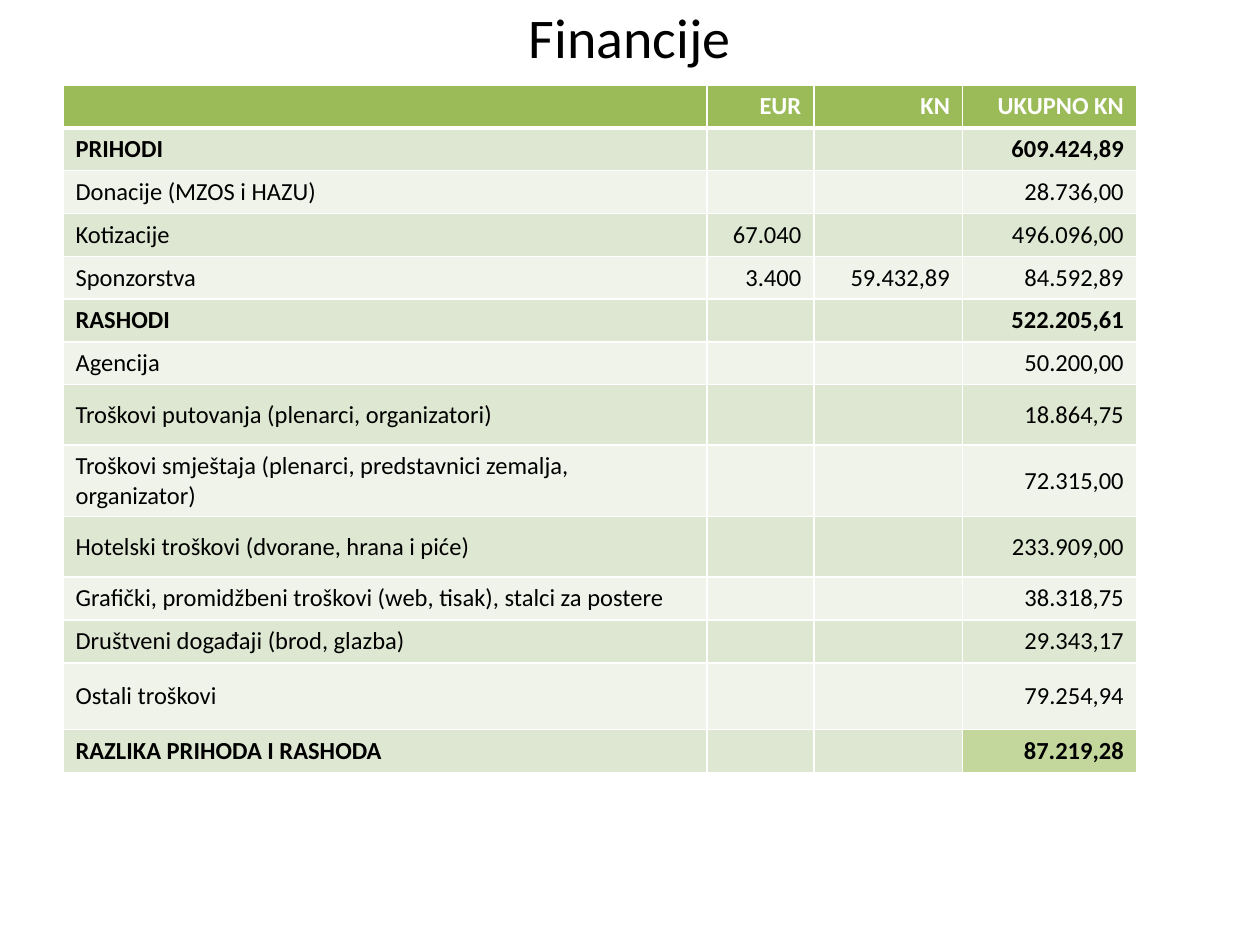
import pptx
import pptx.util
import pptx.dml.color
import pptx.enum.text
import pptx.oxml
import pptx.oxml.ns


def color(value):
    return pptx.dml.color.RGBColor.from_string(value)


def add_border(cell, side, width):
    ns = pptx.oxml.ns.nsdecls("a")
    line = pptx.oxml.parse_xml(
        f'<a:ln{side} {ns} w="{pptx.util.Pt(width)}"><a:solidFill>'
        f'<a:srgbClr val="FFFFFF"/></a:solidFill></a:ln{side}>')
    cell._tc.get_or_add_tcPr().append(line)


prs = pptx.Presentation()
prs.slide_width = pptx.util.Inches(10)
prs.slide_height = pptx.util.Inches(7.5)
W, H = prs.slide_width, prs.slide_height
ALIGN = pptx.enum.text.PP_ALIGN
MIDDLE = pptx.enum.text.MSO_ANCHOR.MIDDLE
s = prs.slides.add_slide(prs.slide_layouts[6])

sp = s.shapes.add_textbox(int(W * 0.05), pptx.util.Inches(-0.06),
                          int(W * 0.9), pptx.util.Inches(0.7))
tf = sp.text_frame
tf.word_wrap = True
tf.vertical_anchor = MIDDLE
p = tf.paragraphs[0]
p.alignment = ALIGN.CENTER
r = p.add_run()
r.text = "Financije"
r.font.size = pptx.util.Pt(32)
r.font.name = "Calibri"
r.font.color.rgb = color("000000")

rows = [
    ("", "EUR", "KN", "UKUPNO KN"),
    ("PRIHODI", "", "", "609.424,89"),
    ("Donacije (MZOS i HAZU)", "", "", "28.736,00"),
    ("Kotizacije", "67.040", "", "496.096,00"),
    ("Sponzorstva", "3.400", "59.432,89", "84.592,89"),
    ("RASHODI", "", "", "522.205,61"),
    ("Agencija", "", "", "50.200,00"),
    ("Troškovi putovanja (plenarci, organizatori)", "", "", "18.864,75"),
    ("Troškovi smještaja (plenarci, predstavnici zemalja, organizator)", "", "", "72.315,00"),
    ("Hotelski troškovi (dvorane, hrana i piće)", "", "", "233.909,00"),
    ("Grafički, promidžbeni troškovi (web, tisak), stalci za postere", "", "", "38.318,75"),
    ("Društveni događaji (brod, glazba)", "", "", "29.343,17"),
    ("Ostali troškovi", "", "", "79.254,94"),
    ("RAZLIKA PRIHODA I RASHODA", "", "", "87.219,28"),
]
col_widths = [5.11, 0.85, 1.18, 1.38]
tall_rows = {7: 0.48, 8: 0.48, 9: 0.48, 12: 0.53}
row_heights = [tall_rows.get(i, 0.34) for i in range(len(rows))]
bold_rows = (0, 1, 5, 13)
last_row, last_col = len(rows) - 1, len(col_widths) - 1

table = s.shapes.add_table(
    len(rows), len(col_widths), int(W * 0.05), int(H * 0.09),
    pptx.util.Inches(sum(col_widths)), pptx.util.Inches(sum(row_heights))).table
for column, width in zip(table.columns, col_widths):
    column.width = pptx.util.Inches(width)
for row, height in zip(table.rows, row_heights):
    row.height = pptx.util.Inches(height)

for i, values in enumerate(rows):
    for j, text in enumerate(values):
        cell = table.cell(i, j)
        cell.vertical_anchor = MIDDLE
        for side in "LRTB":
            under_header = (i, side) in ((0, "B"), (1, "T"))
            add_border(cell, side, 3 if under_header else 1)
        fill = "9BBB59" if i == 0 else "DEE7D1" if i % 2 else "EFF3EA"
        if (i, j) == (last_row, last_col):
            fill = "C3D69B"
        cell.fill.solid()
        cell.fill.fore_color.rgb = color(fill)
        p = cell.text_frame.paragraphs[0]
        p.alignment = ALIGN.RIGHT if j else ALIGN.LEFT
        if text:
            r = p.add_run()
            r.text = text
            r.font.size = pptx.util.Pt(14)
            r.font.name = "Calibri"
            r.font.bold = i in bold_rows
            r.font.color.rgb = color("000000" if i else "FFFFFF")
        else:
            p._p.append(pptx.oxml.parse_xml(
                f'<a:endParaRPr {pptx.oxml.ns.nsdecls("a")} sz="1400"/>'))

prs.save("out.pptx")
